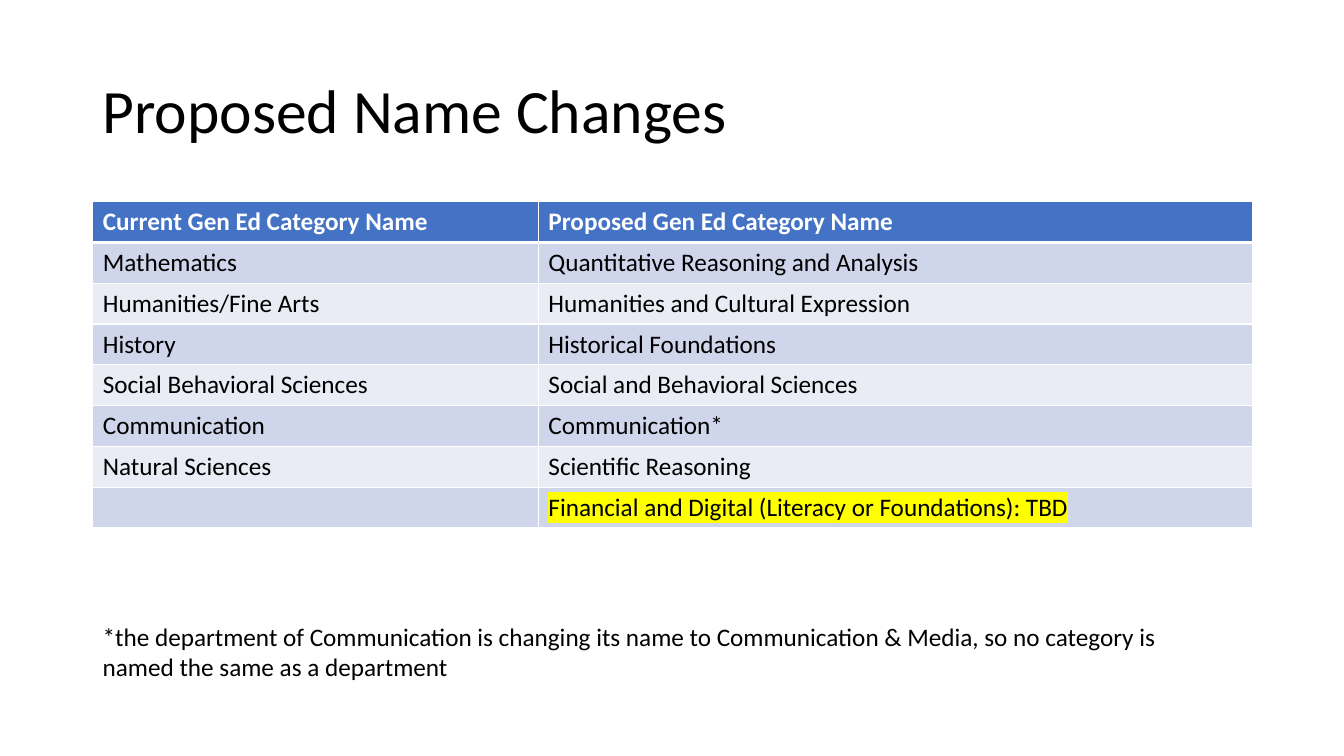
import lxml.etree
import pptx
import pptx.dml.color
import pptx.enum.text
import pptx.oxml.ns
import pptx.util

Inches = pptx.util.Inches
Pt = pptx.util.Pt
qn = pptx.oxml.ns.qn
MIDDLE = pptx.enum.text.MSO_ANCHOR.MIDDLE
TOP = pptx.enum.text.MSO_ANCHOR.TOP

COLORS = {
    "text": "000000",
    "white": "FFFFFF",
    "header": "4472C4",
    "band_dark": "CFD5EA",
    "band_light": "E9EBF5",
    "highlight": "FFFF00",
}
FONT = "Calibri"
HEADERS = ("Current Gen Ed Category Name", "Proposed Gen Ed Category Name")
NAME_CHANGES = [
    ("Mathematics", "Quantitative Reasoning and Analysis"),
    ("Humanities/Fine Arts", "Humanities and Cultural Expression"),
    ("History", "Historical Foundations"),
    ("Social Behavioral Sciences", "Social and Behavioral Sciences"),
    ("Communication", "Communication*"),
    ("Natural Sciences", "Scientific Reasoning"),
    ("", "Financial and Digital (Literacy or Foundations): TBD"),
]
FOOTNOTE = (
    "*the department of Communication is changing its name to Communication & Media, "
    "so no category is named the same as a department"
)


def rgb(name):
    """Return the palette colour called name."""
    return pptx.dml.color.RGBColor.from_string(COLORS[name])


def add_text(tf, text, size=18, color="text", bold=False, spacing=None, highlight=None):
    """Write one formatted run into the first paragraph of a text frame."""
    p = tf.paragraphs[0]
    if spacing:
        p.line_spacing = spacing
    r = p.add_run()
    r.text = text
    r.font.size = Pt(size)
    r.font.bold = bold
    r.font.color.rgb = rgb(color)
    if highlight:
        mark = lxml.etree.SubElement(r.font._element, qn("a:highlight"))
        lxml.etree.SubElement(mark, qn("a:srgbClr"), val=COLORS[highlight])
    r.font.name = FONT


def add_text_box(s, box, text, anchor=TOP, **fmt):
    """Place a wrapping text box in the given box."""
    tf = s.shapes.add_textbox(*map(Inches, box)).text_frame
    tf.word_wrap = True
    tf.vertical_anchor = anchor
    add_text(tf, text, **fmt)


def set_borders(cell, bottom=1):
    """Draw white borders around a cell."""
    tcPr = cell._tc.get_or_add_tcPr()
    for side, width in (("L", 1), ("R", 1), ("T", 1), ("B", bottom)):
        ln = lxml.etree.SubElement(tcPr, qn(f"a:ln{side}"), w=str(Pt(width)))
        fill = lxml.etree.SubElement(ln, qn("a:solidFill"))
        lxml.etree.SubElement(fill, qn("a:srgbClr"), val=COLORS["white"])


def add_name_table(s, box, first_width):
    """Place the table of current and proposed names in the given box."""
    left, top, width, height = box
    rows = [HEADERS] + NAME_CHANGES
    table = s.shapes.add_table(len(rows), 2, *map(Inches, box)).table
    table.columns[0].width = Inches(first_width)
    table.columns[1].width = Inches(width - first_width)
    for i, names in enumerate(rows):
        table.rows[i].height = Inches(height / len(rows))
        header = i == 0
        band = "header" if header else "band_dark" if i % 2 else "band_light"
        for j, name in enumerate(names):
            cell = table.cell(i, j)
            set_borders(cell, bottom=3 if header else 1)
            cell.fill.solid()
            cell.fill.fore_color.rgb = rgb(band)
            if name:
                add_text(
                    cell.text_frame,
                    name,
                    color="white" if header else "text",
                    bold=header,
                    highlight="highlight" if name.endswith("TBD") else None,
                )


def build_name_changes(prs):
    """Build the slide with its title, table and footnote."""
    s = prs.slides.add_slide(prs.slide_layouts[6])
    add_text_box(s, (0.92, 0.4, 11.5, 1.45), "Proposed Name Changes",
                 anchor=MIDDLE, size=44, spacing=0.9)
    add_name_table(s, (0.92, 2, 11.5, 3.24), first_width=4.42)
    add_text_box(s, (0.92, 6.11, 11.35, 0.71), FOOTNOTE)


def main():
    """Create and save the presentation."""
    prs = pptx.Presentation()
    prs.slide_width = Inches(13.33)
    prs.slide_height = Inches(7.5)
    build_name_changes(prs)
    prs.save("out.pptx")


if __name__ == "__main__":
    main()
